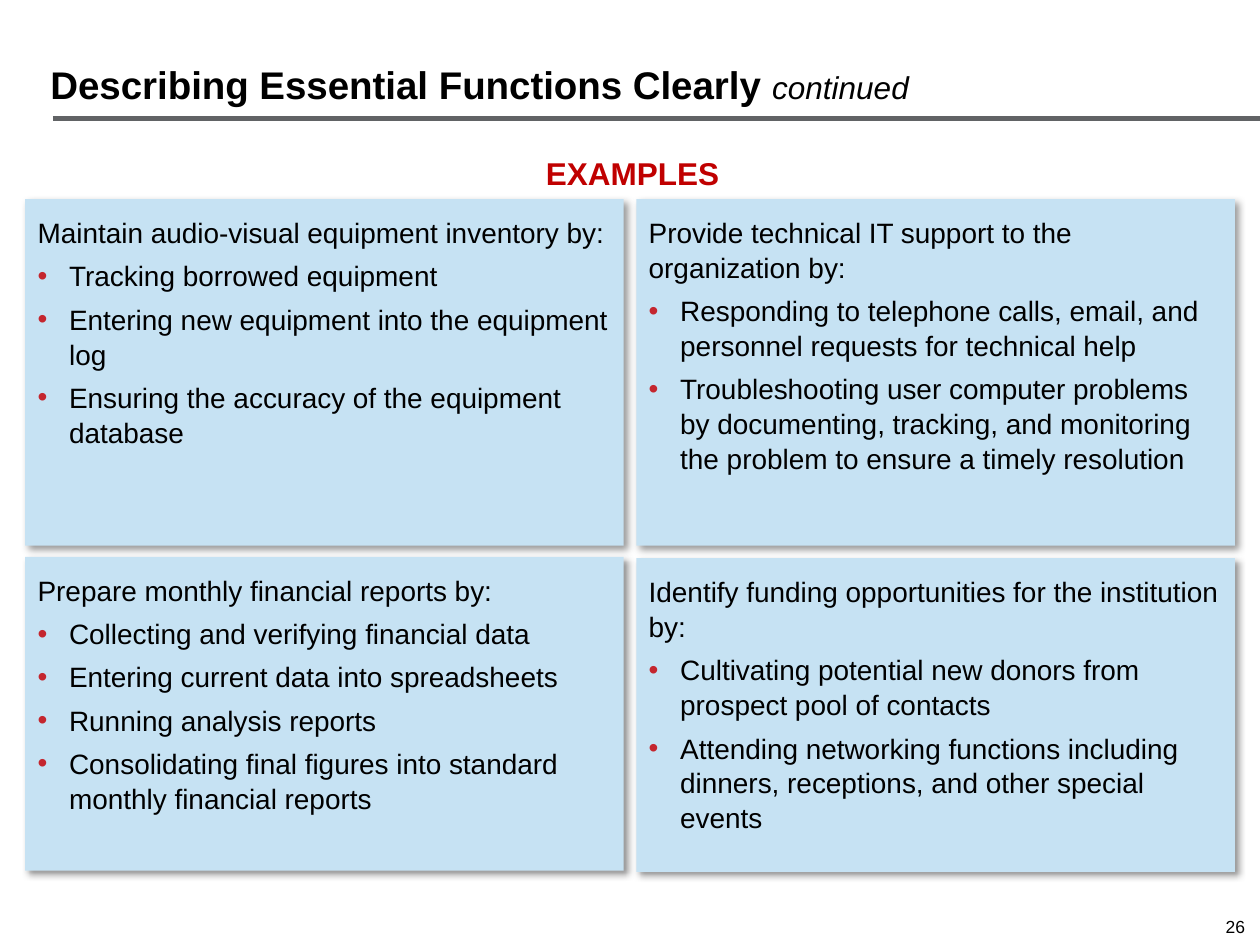
"""Build the slide of example essential functions, four cards under a title."""
from lxml.etree import SubElement
from pptx import Presentation
from pptx.dml.color import RGBColor
from pptx.enum.shapes import MSO_CONNECTOR, MSO_SHAPE
from pptx.enum.text import MSO_ANCHOR, MSO_AUTO_SIZE, PP_ALIGN
from pptx.oxml.ns import qn
from pptx.util import Inches, Pt

BLACK = RGBColor(0x00, 0x00, 0x00)
RED = RGBColor(0xC0, 0x00, 0x00)
BULLET_RED = RGBColor(0xC4, 0x26, 0x2E)
PALE_BLUE = RGBColor(0xC6, 0xE2, 0xF3)
GREY = RGBColor(0x61, 0x63, 0x65)

TITLE = [
    ("Describing Essential Functions Clearly ", {"size": Pt(22), "bold": True}),
    ("continued", {"size": Pt(18), "bold": False, "italic": True}),
]
HEADING = [("EXAMPLES", {"size": Pt(18), "bold": True})]
PAGE_NUMBER = [("26", {"size": Pt(10)})]
BODY = {"size": Pt(16)}

CARDS = [
    (0, 1.58, 2.75, "Maintain audio-visual equipment inventory by:", [
        "Tracking borrowed equipment",
        "Entering new equipment into the equipment log",
        "Ensuring the accuracy of the equipment database",
    ]),
    (0, 4.42, 2.49, "Prepare monthly financial reports by:", [
        "Collecting and verifying financial data",
        "Entering current data into spreadsheets",
        "Running analysis reports",
        "Consolidating final figures into standard monthly financial reports",
    ]),
    (1, 1.58, 2.75, "Provide technical IT support to the organization by:", [
        "Responding to telephone calls, email, and personnel requests for technical help",
        "Troubleshooting user computer problems by documenting, tracking, and "
        "monitoring the problem to ensure a timely resolution",
    ]),
    (1, 4.43, 2.49, "Identify funding opportunities for the institution by:", [
        "Cultivating potential new donors from prospect pool of contacts",
        "Attending networking functions including dinners, receptions, and other special events",
    ]),
]
CARD_LEFT, CARD_WIDTH, CARD_GAP = 0.2, 4.75, 0.1


def apply(target, values):
    for name, value in values.items():
        setattr(target, name, value)


def write(para, spans, color=BLACK, **layout):
    apply(para, layout)
    for text, values in spans:
        span = para.add_run()
        span.text = text
        apply(span.font, {"name": "Arial", **values})
        span.font.color.rgb = color


def add_text(page, place, spans, color, anchor, **layout):
    box = page.shapes.add_textbox(*map(Inches, place))
    apply(box.text_frame, {"word_wrap": True, "vertical_anchor": anchor})
    write(box.text_frame.paragraphs[0], spans, color, **layout)


def add_bullet(para):
    props = para._p.get_or_add_pPr()
    props.set("marL", str(Inches(0.25)))
    props.set("indent", str(-Inches(0.25)))
    color = SubElement(props, qn("a:buClr"))
    SubElement(color, qn("a:srgbClr"), val=str(BULLET_RED))
    SubElement(props, qn("a:buFont"), typeface="Arial")
    SubElement(props, qn("a:buChar"), char="•")


def add_shadow(shape):
    shape.shadow.inherit = False
    effects = shape._element.spPr.find(qn("a:effectLst"))
    shadow = SubElement(effects, qn("a:outerShdw"), blurRad=str(Pt(4)), dist=str(Pt(3)),
                        dir=str(45 * 60000), algn="tl", rotWithShape="0")
    color = SubElement(shadow, qn("a:srgbClr"), val=str(BLACK))
    SubElement(color, qn("a:alpha"), val="40000")


def add_card(page, column, top, height, lead, points):
    left = CARD_LEFT + column * (CARD_WIDTH + CARD_GAP)
    card = page.shapes.add_shape(MSO_SHAPE.RECTANGLE,
                                 *map(Inches, (left, top, CARD_WIDTH, height)))
    card.fill.solid()
    card.fill.fore_color.rgb = PALE_BLUE
    card.line.fill.background()
    add_shadow(card)
    frame = card.text_frame
    apply(frame, {"word_wrap": True, "vertical_anchor": MSO_ANCHOR.TOP,
                  "margin_left": Inches(0.1), "margin_right": Inches(0.1),
                  "margin_top": Inches(0.12), "margin_bottom": Inches(0.1)})
    layout = {"alignment": PP_ALIGN.LEFT, "line_spacing": 1.04}
    write(frame.paragraphs[0], [(lead, BODY)], **layout)
    for point in points:
        para = frame.add_paragraph()
        add_bullet(para)
        write(para, [(point, BODY)], space_before=Pt(4.8), **layout)


def add_title(page):
    title = page.shapes.title
    apply(title, {"left": Inches(0.3), "top": Inches(0.08),
                  "width": Inches(9.53), "height": Inches(0.83)})
    apply(title.text_frame, {"vertical_anchor": MSO_ANCHOR.BOTTOM, "word_wrap": True,
                             "auto_size": MSO_AUTO_SIZE.NONE})
    write(title.text_frame.paragraphs[0], TITLE,
          alignment=PP_ALIGN.LEFT, line_spacing=0.9)


def add_rule(page):
    rule = page.shapes.add_connector(MSO_CONNECTOR.STRAIGHT,
                                     *map(Inches, (0.42, 0.94, 10, 0.94)))
    rule.line.color.rgb = GREY
    rule.line.width = Pt(3)
    SubElement(rule._element.spPr, qn("a:effectLst"))


def main():
    deck = Presentation()
    apply(deck, {"slide_width": Inches(10), "slide_height": Inches(7.5)})
    page = deck.slides.add_slide(deck.slide_layouts[5])
    add_title(page)
    add_rule(page)
    add_text(page, (9.38, 7.24, 0.6, 0.25), PAGE_NUMBER, BLACK, MSO_ANCHOR.MIDDLE,
             alignment=PP_ALIGN.RIGHT, line_spacing=0.9)
    add_text(page, (0.02, 1.17, 10, 0.37), HEADING, RED, MSO_ANCHOR.TOP,
             alignment=PP_ALIGN.CENTER)
    for card in CARDS:
        add_card(page, *card)
    deck.save("out.pptx")


if __name__ == "__main__":
    main()
